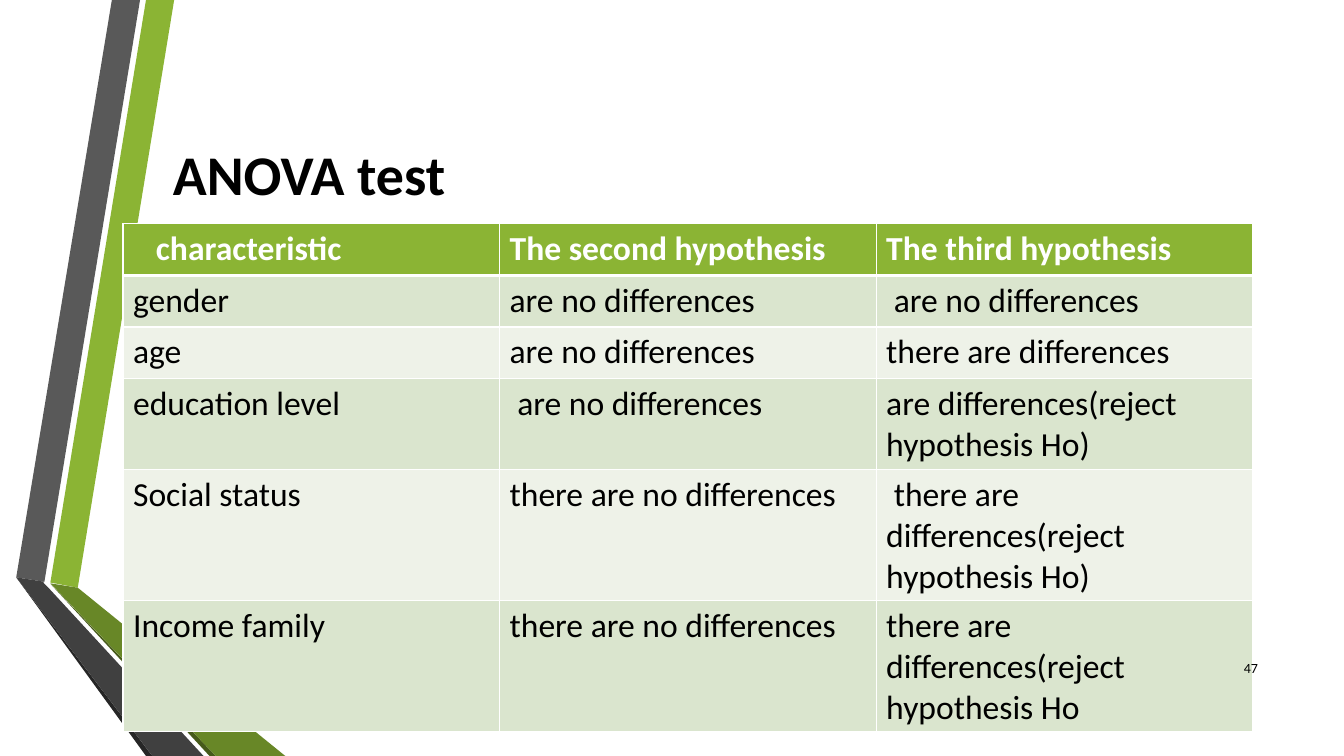
from lxml import etree
from pptx import Presentation
from pptx.dml.color import RGBColor
from pptx.enum.text import MSO_ANCHOR, PP_ALIGN
from pptx.oxml.ns import qn
from pptx.util import Cm, Pt

LEFT, RIGHT = PP_ALIGN.LEFT, PP_ALIGN.RIGHT
MIDDLE = MSO_ANCHOR.MIDDLE
FONT = "Calibri"

COLORS = {
    "white": "FFFFFF", "black": "000000",
    "green": "8BB434", "deep green": "688727", "dark green": "465A1A",
    "gray": "595959", "deep gray": "404040", "dark gray": "262626",
    "band": "DAE5CE", "pale band": "EEF2E8",
}

# Ribbon outlines: colour and corner points in cm
RIBBONS = [
    ("green", [(1.27, 14.68), (1.96, 14.81), (4.39, 0), (3.68, 0)]),
    ("gray", [(3.53, 0), (2.82, 0), (0.41, 14.55), (1.12, 14.66)]),
    ("dark gray", [(0.41, 14.55), (3.68, 19.05), (3.84, 19.05)]),
    ("dark green", [(1.27, 14.71), (5.28, 19.05), (5.44, 19.05)]),
    ("deep green", [(1.27, 14.7), (5.44, 19.05), (7.19, 19.05), (1.96, 14.81)]),
    ("deep gray", [(5.13, 19.05), (1.22, 14.81), (1.09, 14.68), (1.12, 14.66),
                   (0.41, 14.55), (3.84, 19.05)]),
]

# Text, box in cm, alignment, font format
TITLE = ("ANOVA test", (4.11, 1.91, 27.84, 4.88), LEFT,
         {"size": Pt(40), "bold": True})
PAGE_NUMBER = ("47", (30.43, 16.31, 1.52, 1.02), RIGHT, {"size": Pt(10)})

ROWS = [
    ("characteristic", "The second hypothesis", "The third hypothesis"),
    ("gender", "are no differences", " are no differences"),
    ("age", "are no differences", "there are differences"),
    ("education level", " are no differences",
     "are differences(reject hypothesis Ho)"),
    ("Social status", "there are no differences",
     " there are differences(reject hypothesis Ho)"),
    ("Income family", "there are no differences",
     "there are differences(reject hypothesis Ho"),
]
TABLE_LEFT, TABLE_TOP, COLUMN_WIDTH = 3.1, 5.64, 9.49
ROW_HEIGHTS = [1.3, 1.3, 1.3, 2.29, 2.29, 2.9]
HEADER_INDENT = 0.83


def rgb(name):
    return RGBColor.from_string(COLORS[name])


def write(tf, text, color, fmt, align=LEFT):
    p = tf.paragraphs[0]
    p.alignment = align
    r = p.add_run()
    r.text = text
    r.font.name = FONT
    r.font.color.rgb = rgb(color)
    for key, value in fmt.items():
        setattr(r.font, key, value)


def add_ribbon(s, color, points):
    corners = [(Cm(x), Cm(y)) for x, y in points]
    builder = s.shapes.build_freeform(*corners[0])
    builder.add_line_segments(corners[1:], close=True)
    sp = builder.convert_to_shape()
    sp.shadow.inherit = False
    sp.fill.solid()
    sp.fill.fore_color.rgb = rgb(color)
    sp.line.fill.background()


def add_text(s, text, box, align, fmt):
    tf = s.shapes.add_textbox(*map(Cm, box)).text_frame
    tf.word_wrap = True
    tf.vertical_anchor = MIDDLE
    write(tf, text, "black", fmt, align)


def set_borders(cell, widths):
    """Draw white cell edges; widths maps each edge tag to points."""
    tc_pr = cell._tc.get_or_add_tcPr()
    for edge, width in widths.items():
        ln = etree.SubElement(tc_pr, qn(f"a:{edge}"), w=str(Pt(width)))
        fill = etree.SubElement(ln, qn("a:solidFill"))
        etree.SubElement(fill, qn("a:srgbClr"), val=COLORS["white"])


def add_hypothesis_table(s):
    n_cols = len(ROWS[0])
    table = s.shapes.add_table(
        len(ROWS), n_cols, Cm(TABLE_LEFT), Cm(TABLE_TOP),
        Cm(COLUMN_WIDTH * n_cols), Cm(sum(ROW_HEIGHTS))).table
    for column in table.columns:
        column.width = Cm(COLUMN_WIDTH)
    for i, (texts, height) in enumerate(zip(ROWS, ROW_HEIGHTS)):
        table.rows[i].height = Cm(height)
        header = i == 0
        fill = "green" if header else "band" if i % 2 else "pale band"
        for j, text in enumerate(texts):
            cell = table.cell(i, j)
            set_borders(cell, {"lnL": 1, "lnR": 1, "lnT": 3 if i == 1 else 1,
                               "lnB": 3 if header else 1})
            cell.fill.solid()
            cell.fill.fore_color.rgb = rgb(fill)
            write(cell.text_frame, text, "white" if header else "black",
                  {"size": Pt(24), "bold": header})
    table.cell(0, 0).margin_left = Cm(HEADER_INDENT)


def main():
    prs = Presentation()
    prs.slide_width, prs.slide_height = Cm(33.87), Cm(19.05)
    s = prs.slides.add_slide(prs.slide_layouts[6])
    for color, points in RIBBONS:
        add_ribbon(s, color, points)
    add_text(s, *TITLE)
    add_hypothesis_table(s)
    add_text(s, *PAGE_NUMBER)
    prs.save("out.pptx")


if __name__ == "__main__":
    main()
